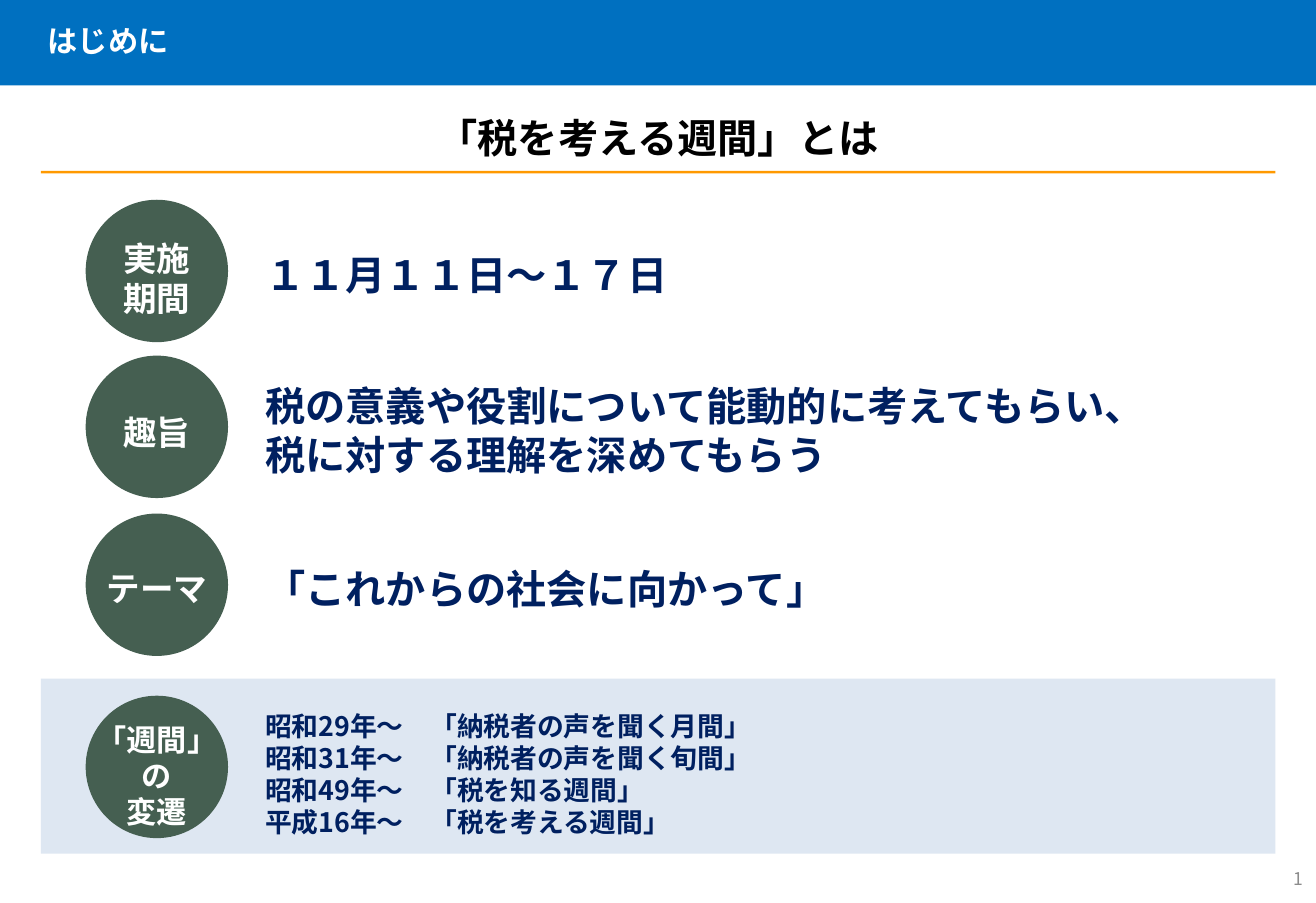
from dataclasses import dataclass

from lxml import etree
from pptx import Presentation
from pptx.dml.color import RGBColor
from pptx.enum.shapes import MSO_SHAPE
from pptx.enum.text import MSO_ANCHOR, MSO_AUTO_SIZE, PP_ALIGN
from pptx.oxml.ns import qn
from pptx.util import Emu, Inches, Pt

RECT, ROUND_RECT, OVAL = MSO_SHAPE.RECTANGLE, MSO_SHAPE.ROUNDED_RECTANGLE, MSO_SHAPE.OVAL
LEFT, CENTER, RIGHT = PP_ALIGN.LEFT, PP_ALIGN.CENTER, PP_ALIGN.RIGHT
TOP, MIDDLE = MSO_ANCHOR.TOP, MSO_ANCHOR.MIDDLE
FIT_SHAPE, FIT_NONE = MSO_AUTO_SIZE.SHAPE_TO_FIT_TEXT, MSO_AUTO_SIZE.NONE

# Slide of 27.7 by 19 cm, with a grid of 100 columns by 100 rows
WIDTH, HEIGHT = Emu(9972675), Emu(6840538)
COL, ROW = WIDTH.inches / 100, HEIGHT.inches / 100
MARGIN_COL, CONTENT_COLS = 3.12, 93.8
CIRCLE_COL, CIRCLE_COLS = 6.51, 10.82
CIRCLE_ROWS = CIRCLE_COLS * COL / ROW
DETAIL_COL = 19.25


@dataclass(frozen=True)
class Theme:
    font: str = "Noto Sans CJK JP"
    banner: str = "0070C0"
    rule: str = "FF9900"
    circle: str = "455F51"
    panel: str = "DEE7F2"
    navy: str = "002060"
    black: str = "000000"
    white: str = "FFFFFF"
    gray: str = "8C8C8C"
    large: float = 24
    medium: float = 20
    small: float = 18
    history: float = 16
    number: float = 10.5
    leading: float = 1.2


THEME = Theme()


@dataclass(frozen=True)
class Topic:
    circle_row: float
    label: str
    label_row: float
    label_cols: float
    label_size: float
    detail: str
    detail_row: float
    detail_cols: float
    detail_size: float


TOPICS = [
    Topic(22.12, "実施\n期間", 25.72, 7.06, THEME.medium,
          "１１月１１日～１７日", 27.08, 32.91, THEME.large),
    Topic(39.38, "趣旨", 45, 7.06, THEME.medium,
          "税の意義や役割について能動的に考えてもらい、\n税に対する理解を深めてもらう",
          41.6, 69.75, THEME.large),
    Topic(56.87, "テーマ", 62.25, 9.62, THEME.medium,
          "「これからの社会に向かって」", 61.84, 45, THEME.large),
    Topic(77.04, "「週間」\nの\n変遷", 79.2, 11.18, THEME.small,
          "昭和29年～　「納税者の声を聞く月間」\n"
          "昭和31年～　「納税者の声を聞く旬間」\n"
          "昭和49年～　「税を知る週間」\n"
          "平成16年～　「税を考える週間」",
          77.9, 39.87, THEME.history),
]


def area(col, row, cols, rows):
    return Inches(col * COL), Inches(row * ROW), Inches(cols * COL), Inches(rows * ROW)


def text_rows(text, size):
    """Rows taken up by the lines of a text and its margins."""
    lines = text.count("\n") + 1
    return (lines * size * THEME.leading / 72 + 0.1) / ROW


def write(shape, text, size, color, bold=True, align=LEFT, anchor=TOP,
          wrap=True, fit=FIT_SHAPE, leading=None):
    frame = shape.text_frame
    frame.word_wrap, frame.auto_size, frame.vertical_anchor = wrap, fit, anchor
    for index, line in enumerate(text.split("\n")):
        paragraph = frame.add_paragraph() if index else frame.paragraphs[0]
        paragraph.alignment = align
        paragraph.line_spacing = leading or Pt(size * THEME.leading)
        run = paragraph.add_run()
        run.text = line
        font = run.font
        font.size, font.bold, font.name = Pt(size), bold, THEME.font
        font.color.rgb = RGBColor.from_string(color)
        east_asian = etree.SubElement(run._r.get_or_add_rPr(), qn("a:ea"))
        east_asian.set("typeface", THEME.font)


def add_block(slide, kind, place, color):
    block = slide.shapes.add_shape(kind, *area(*place))
    block.shadow.inherit = False
    block.fill.solid()
    block.fill.fore_color.rgb = RGBColor.from_string(color)
    block.line.fill.background()
    if kind == ROUND_RECT:
        block.adjustments[0] = 0
    return block


def add_text(slide, text, place, **style):
    write(slide.shapes.add_textbox(*area(*place)), text, **style)


def add_topic(slide, topic):
    add_block(slide, OVAL, (CIRCLE_COL, topic.circle_row, CIRCLE_COLS, CIRCLE_ROWS),
              THEME.circle)
    label_col = CIRCLE_COL + (CIRCLE_COLS - topic.label_cols) / 2
    add_text(slide, topic.label,
             (label_col, topic.label_row, topic.label_cols,
              text_rows(topic.label, topic.label_size)),
             size=topic.label_size, color=THEME.white, align=CENTER, wrap=False)
    add_text(slide, topic.detail,
             (DETAIL_COL, topic.detail_row, topic.detail_cols,
              text_rows(topic.detail, topic.detail_size)),
             size=topic.detail_size, color=THEME.navy, wrap=False)


def add_banner(slide):
    banner = add_block(slide, RECT, (0, 0, 100, 9.45), THEME.banner)
    banner.text_frame.margin_left = Inches(3.63 * COL)
    write(banner, "はじめに", size=THEME.small, color=THEME.white,
          anchor=MIDDLE, fit=FIT_NONE, leading=0.9)


def main():
    deck = Presentation()
    deck.slide_width, deck.slide_height = WIDTH, HEIGHT
    slide = deck.slides.add_slide(deck.slide_layouts[6])

    # Panel behind the history of the week
    add_block(slide, ROUND_RECT, (MARGIN_COL, 75.15, CONTENT_COLS, 19.39), THEME.panel)

    # Heading with its rule
    heading = "「税を考える週間」とは"
    add_text(slide, heading, (0, 11.9, 100, text_rows(heading, THEME.large)),
             size=THEME.large, color=THEME.black, align=CENTER)
    add_block(slide, ROUND_RECT, (MARGIN_COL, 18.92, CONTENT_COLS, 0.27), THEME.rule)

    # Topics: circle, label and detail
    for topic in TOPICS:
        add_topic(slide, topic)

    # Banner and page number
    add_banner(slide)
    add_text(slide, "1", (77.5, 94.65, 22.46, 5.35), size=THEME.number,
             color=THEME.gray, bold=False, align=RIGHT, anchor=MIDDLE, fit=FIT_NONE)

    deck.save("out.pptx")


if __name__ == "__main__":
    main()
